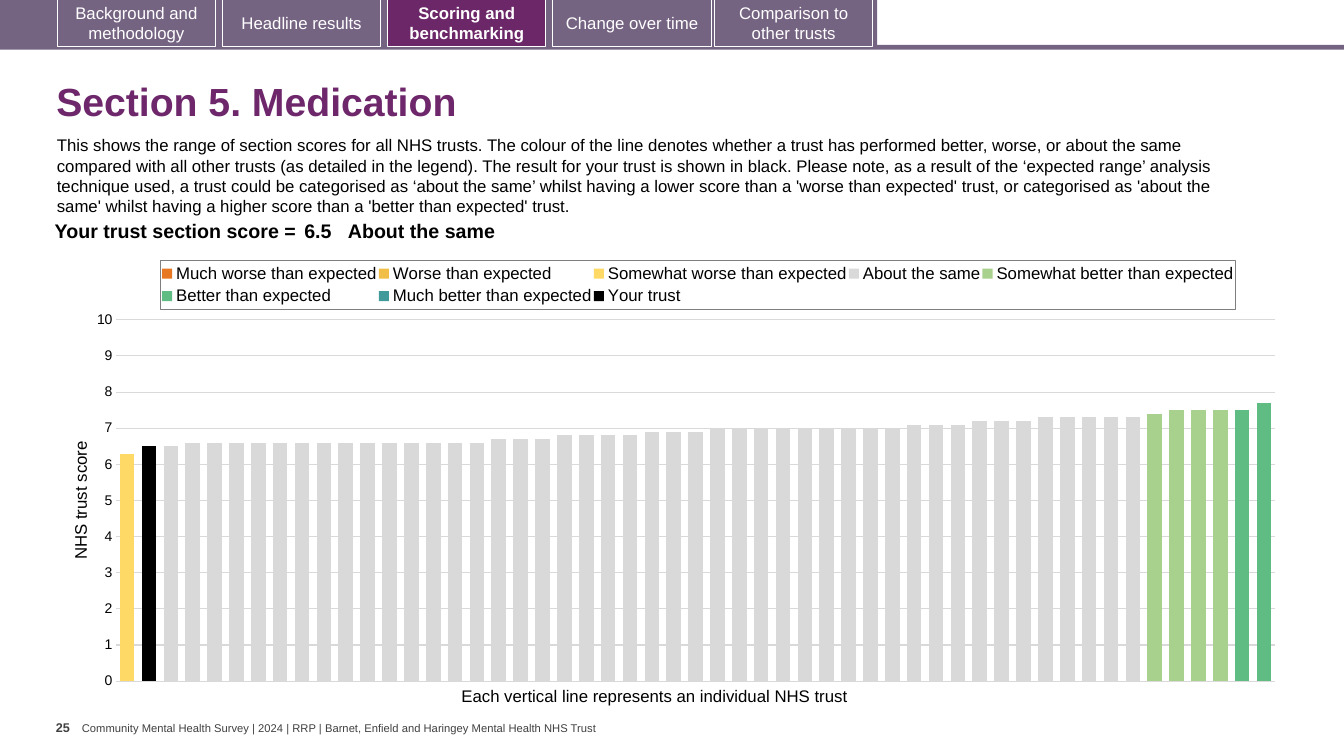
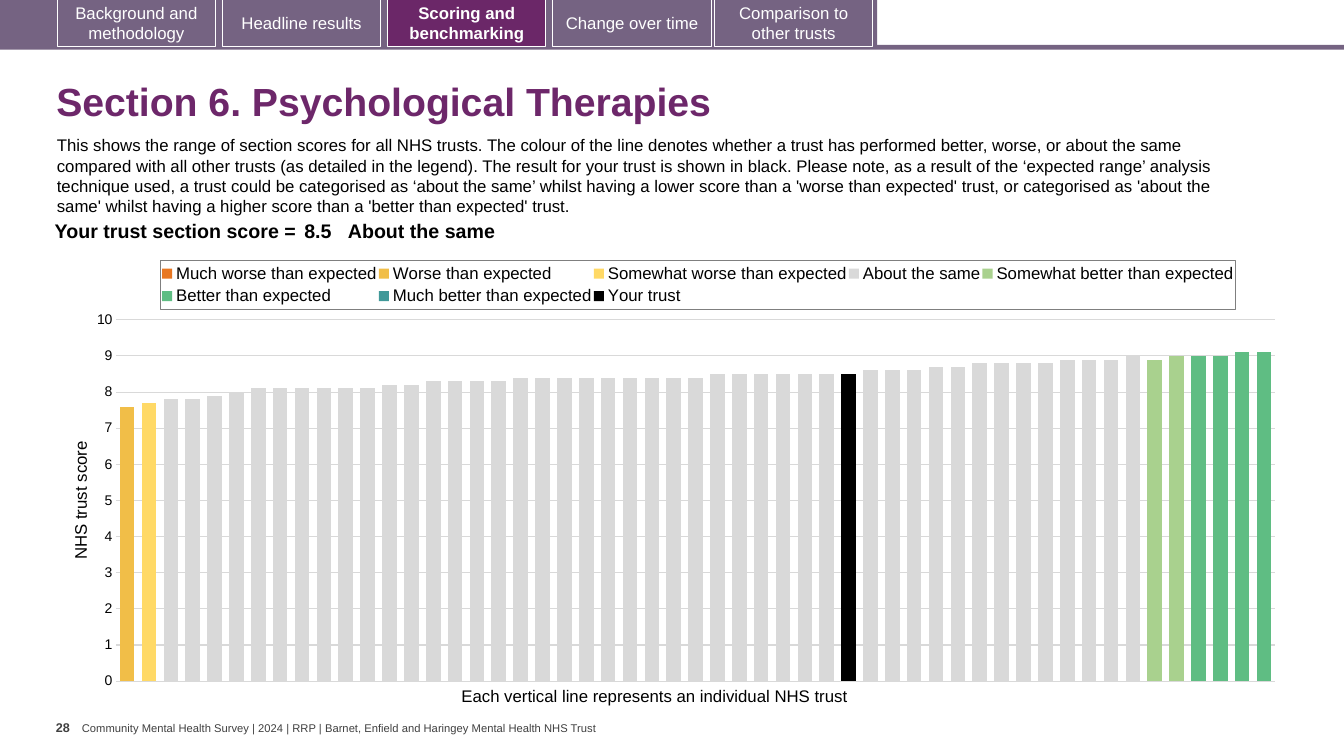
from copy import deepcopy
from dataclasses import dataclass

from pptx import Presentation
from pptx.chart.data import CategoryChartData
from pptx.dml.color import RGBColor
from pptx.enum.chart import XL_CHART_TYPE, XL_LEGEND_POSITION, XL_TICK_MARK
from pptx.enum.shapes import MSO_SHAPE
from pptx.enum.text import MSO_ANCHOR, MSO_AUTO_SIZE, PP_ALIGN
from pptx.oxml import parse_xml
from pptx.oxml.ns import nsdecls, qn
from pptx.util import Pt

COLUMNS = XL_CHART_TYPE.COLUMN_CLUSTERED
LEGEND_TOP = XL_LEGEND_POSITION.TOP
NO_TICKS = XL_TICK_MARK.NONE
RECTANGLE = MSO_SHAPE.RECTANGLE
TOP, MIDDLE = MSO_ANCHOR.TOP, MSO_ANCHOR.MIDDLE
NO_AUTOFIT = MSO_AUTO_SIZE.NONE
LEFT, CENTER, RIGHT = PP_ALIGN.LEFT, PP_ALIGN.CENTER, PP_ALIGN.RIGHT

FONT = "Arial"
BLACK, WHITE, GREY = "000000", "FFFFFF", "404040"
BAND, ACTIVE, TITLE = "756382", "6B2768", "6D276A"
GRID, LEGEND_LINE = "D9D9D9", "7F7F7F"

TITLE_ONLY = 5
TRUST_COUNT = 53
ACTIVE_TAB = "Scoring and benchmarking"
TABS = {
    "Background and methodology": 41,
    "Headline results": 159,
    ACTIVE_TAB: 277,
    "Change over time": 395,
    "Comparison to other trusts": 510.5,
}
SERIES_COLORS = {
    "Much worse than expected": "E87722",
    "Worse than expected": "F1BE48",
    "Somewhat worse than expected": "FFD966",
    "About the same": "D9D9D9",
    "Somewhat better than expected": "A9D18E",
    "Better than expected": "5FBD83",
    "Much better than expected": "419999",
    "Your trust": "000000",
}
FOOTER = ("Community Mental Health Survey | 2024 | RRP | "
          "Barnet, Enfield and Haringey Mental Health NHS Trust")
CAPTION = "Each vertical line represents an individual NHS trust"
EXPLANATION = (
    "This shows the range of section scores for all NHS trusts. The colour of the line "
    "denotes whether a trust has performed better, worse, or about the same compared with "
    "all other trusts (as detailed in the legend). The result for your trust is shown in "
    "black. Please note, as a result of the ‘expected range’ analysis technique used, a trust "
    "could be categorised as ‘about the same’ whilst having a lower score than a 'worse than "
    "expected' trust, or categorised as 'about the same' whilst having a higher score than a "
    "'better than expected' trust."
)


@dataclass
class Section:
    """One survey section; scores map a series to its first trust and values."""
    title: str
    page: str
    score: str
    rating: str
    scores: dict


SECTIONS = [
    Section("Section 5. Medication", "25", "6.5", "About the same", {
        "Somewhat worse than expected": (1, [6.3]),
        "About the same": (2, [
            6.5, 6.5, 6.6, 6.6, 6.6, 6.6, 6.6, 6.6, 6.6, 6.6, 6.6, 6.6, 6.6, 6.6, 6.6, 6.6,
            6.7, 6.7, 6.7, 6.8, 6.8, 6.8, 6.8, 6.9, 6.9, 6.9, 7, 7, 7, 7, 7, 7, 7, 7, 7,
            7.1, 7.1, 7.1, 7.2, 7.2, 7.2, 7.3, 7.3, 7.3, 7.3, 7.3]),
        "Somewhat better than expected": (48, [7.4, 7.5, 7.5, 7.5]),
        "Better than expected": (52, [7.5, 7.7]),
        "Your trust": (2, [6.5]),
    }),
    Section("Section 6. Psychological Therapies", "28", "8.5", "About the same", {
        "Worse than expected": (1, [7.6]),
        "Somewhat worse than expected": (2, [7.7]),
        "About the same": (3, [
            7.8, 7.8, 7.9, 8, 8.1, 8.1, 8.1, 8.1, 8.1, 8.1, 8.2, 8.2, 8.3, 8.3, 8.3, 8.3,
            8.4, 8.4, 8.4, 8.4, 8.4, 8.4, 8.4, 8.4, 8.4, 8.5, 8.5, 8.5, 8.5, 8.5, 8.5, 8.5,
            8.6, 8.6, 8.6, 8.7, 8.7, 8.8, 8.8, 8.8, 8.8, 8.9, 8.9, 8.9, 9]),
        "Somewhat better than expected": (48, [8.9, 9]),
        "Better than expected": (50, [9, 9, 9.1, 9.1]),
        "Your trust": (34, [8.5]),
    }),
]


def color(hex_value):
    """Turn a hex string into a colour."""
    return RGBColor.from_string(hex_value)


def style_font(font, size, hex_value=BLACK, bold=False):
    """Apply the deck's typeface with a size, colour and weight."""
    font.name, font.size, font.bold = FONT, Pt(size), bold
    font.color.rgb = color(hex_value)


def write(frame, text, size, hex_value=BLACK, bold=False, align=LEFT):
    """Set one formatted paragraph and return it."""
    frame.text = text
    paragraph = frame.paragraphs[0]
    paragraph.alignment = align
    style_font(paragraph.runs[0].font, size, hex_value, bold)
    return paragraph


def add_text(slide, box, text, size, hex_value=BLACK, bold=False, anchor=TOP, side=7.2, ends=3.6):
    """Add a wrapping text box with the given side and end insets."""
    frame = slide.shapes.add_textbox(*map(Pt, box)).text_frame
    frame.word_wrap, frame.vertical_anchor = True, anchor
    frame.margin_left = frame.margin_right = Pt(side)
    frame.margin_top = frame.margin_bottom = Pt(ends)
    write(frame, text, size, hex_value, bold)


def add_rectangle(slide, box, fill, outline=None):
    """Add a flat rectangle, outlined only when a colour is given."""
    shape = slide.shapes.add_shape(RECTANGLE, *map(Pt, box))
    shape.shadow.inherit = False
    shape.fill.solid()
    shape.fill.fore_color.rgb = color(fill)
    if outline:
        shape.line.color.rgb = color(outline)
        shape.line.width = Pt(0.75)
    else:
        shape.line.fill.background()
    return shape


def add_tab(slide, label, left):
    """Add one navigation tab, highlighted when it is the active one."""
    active = label == ACTIVE_TAB
    tab = add_rectangle(slide, (left, -0.5, 113, 34), ACTIVE if active else BAND, WHITE)
    tab.text_frame.word_wrap = True
    tab.text_frame.vertical_anchor = MIDDLE
    write(tab.text_frame, label, 12, WHITE, active, CENTER)


def move_frame_to_layout(slide):
    """Draw the navigation and footer, then hand them to the slide's layout."""
    add_rectangle(slide, (0, 32, 960, 3.5), BAND)
    add_rectangle(slide, (0, 0, 626.5, 34), BAND)
    for label, left in TABS.items():
        add_tab(slide, label, left)
    add_text(slide, (58.5, 515.5, 380, 9.5), FOOTER, 8, GREY, anchor=MIDDLE, side=0, ends=0)
    layout = slide.slide_layout
    for placeholder in list(layout.placeholders)[1:]:
        layout.shapes.element.remove(placeholder.element)
    for shape in list(slide.shapes):
        if not shape.is_placeholder:
            layout.shapes.element.append(shape.element)


def set_title(slide, text):
    """Place and format the title placeholder."""
    title = slide.shapes.title
    title.left, title.top, title.width, title.height = map(Pt, (33, 48, 899, 52))
    frame = title.text_frame
    paragraph = write(frame, text, 28, TITLE, True)
    paragraph.line_spacing = 0.9
    frame.word_wrap, frame.vertical_anchor, frame.auto_size = True, MIDDLE, NO_AUTOFIT


def add_score_table(slide, section):
    """Add the one-row table with the trust's score and rating."""
    widths = (189.5, 34, 618.5)
    table = slide.shapes.add_table(1, 3, Pt(25), Pt(155), Pt(sum(widths)), Pt(22)).table
    table.first_row = table.horz_banding = False
    columns = (
        ("Your trust section score =", RIGHT, 2.9),
        (section.score, LEFT, 2.9),
        (section.rating, LEFT, 0),
    )
    for index, (text, align, side) in enumerate(columns):
        table.columns[index].width = Pt(widths[index])
        cell = table.cell(0, index)
        cell.fill.background()
        cell.margin_left = cell.margin_right = Pt(side)
        cell.margin_top = cell.margin_bottom = Pt(2.9)
        write(cell.text_frame, text, 14, BLACK, True, align)


def manual_layout(x, y, width, height, target=""):
    """Build a chart layout element from fractions of the chart area."""
    return parse_xml(
        f'<c:layout {nsdecls("c")}><c:manualLayout>{target}'
        f'<c:xMode val="edge"/><c:yMode val="edge"/><c:x val="{x}"/><c:y val="{y}"/>'
        f'<c:w val="{width}"/><c:h val="{height}"/></c:manualLayout></c:layout>')


def place_plot_and_legend(chart):
    """Fix the plot area and the outlined legend inside the chart."""
    plot_area = chart.element.find(".//" + qn("c:plotArea"))
    for layout in plot_area.findall(qn("c:layout")):
        plot_area.remove(layout)
    inner = '<c:layoutTarget val="inner"/>'
    plot_area.insert(0, manual_layout(0.04, 0.158, 0.946, 0.808, inner))
    legend = chart.element.find(".//" + qn("c:legend"))
    legend.find(qn("c:legendPos")).addnext(manual_layout(0.076, 0.025, 0.878, 0.11))
    legend.find(qn("c:overlay")).addnext(parse_xml(
        f'<c:spPr {nsdecls("c", "a")}><a:ln w="9525"><a:solidFill>'
        f'<a:srgbClr val="{LEGEND_LINE}"/></a:solidFill></a:ln></c:spPr>'))


def move_last_series_to_right_axis(chart):
    """Draw the last series on a second, unlabelled value axis."""
    plot_area = chart.element.find(".//" + qn("c:plotArea"))
    bars = plot_area.find(qn("c:barChart"))
    right_bars = deepcopy(bars)
    bars.remove(bars.findall(qn("c:ser"))[-1])
    for series in right_bars.findall(qn("c:ser"))[:-1]:
        right_bars.remove(series)
    bars.addnext(right_bars)
    category_id, value_id = "50010", "50020"
    for axis_id, number in zip(right_bars.findall(qn("c:axId")), (category_id, value_id)):
        axis_id.set("val", number)
    left_axis = plot_area.find(qn("c:valAx"))
    right_axis = deepcopy(left_axis)
    hidden_axis = deepcopy(plot_area.find(qn("c:catAx")))
    for tag in ("c:majorGridlines", "c:title"):
        right_axis.remove(right_axis.find(qn(tag)))
    settings = {"c:axId": value_id, "c:crossAx": category_id, "c:axPos": "r",
                "c:crosses": "max", "c:majorTickMark": "out", "c:tickLblPos": "none"}
    for tag, value in settings.items():
        right_axis.find(qn(tag)).set("val", value)
    hidden_axis.find(qn("c:axId")).set("val", category_id)
    hidden_axis.find(qn("c:crossAx")).set("val", value_id)
    left_axis.addnext(right_axis)
    right_axis.addnext(hidden_axis)


def style_value_axis(axis):
    """Format the score axis from 0 to 10 with light gridlines."""
    axis.minimum_scale, axis.maximum_scale, axis.major_unit = 0, 10, 1
    axis.major_tick_mark = axis.minor_tick_mark = NO_TICKS
    axis.format.line.fill.background()
    axis.has_major_gridlines = True
    axis.major_gridlines.format.line.color.rgb = color(GRID)
    axis.major_gridlines.format.line.width = Pt(0.75)
    style_font(axis.tick_labels.font, 10)
    write(axis.axis_title.text_frame, "NHS trust score", 12)


def add_score_chart(slide, scores):
    """Add the column chart of all trusts, coloured by rating."""
    data = CategoryChartData()
    data.categories = [str(number) for number in range(1, TRUST_COUNT + 1)]
    for name in SERIES_COLORS:
        first, values = scores.get(name, (1, []))
        padded = [None] * (first - 1) + values
        data.add_series(name, padded + [None] * (TRUST_COUNT - len(padded)))
    box = map(Pt, (48, 178, 875, 319.5))
    chart = slide.shapes.add_chart(COLUMNS, *box, data).chart
    chart.has_title = False
    style_font(chart.font, 10)
    chart.font.name = "Calibri"
    plot = chart.plots[0]
    plot.gap_width, plot.overlap, plot.vary_by_categories = 50, 100, False
    for series in plot.series:
        series.format.fill.solid()
        series.format.fill.fore_color.rgb = color(SERIES_COLORS[series.name])
    chart.category_axis.visible = False
    style_value_axis(chart.value_axis)
    chart.has_legend = True
    chart.legend.position = LEGEND_TOP
    chart.legend.include_in_layout = False
    style_font(chart.legend.font, 12)
    place_plot_and_legend(chart)
    move_last_series_to_right_axis(chart)


def fill_slide(slide, section):
    """Add the content of one section slide."""
    set_title(slide, section.title)
    add_text(slide, (40, 511, 18, 29), section.page, 9, GREY, True, side=0)
    add_text(slide, (33.5, 93, 873.5, 65.5), EXPLANATION, 12)
    add_text(slide, (322.5, 486, 296, 21.5), CAPTION, 12)
    add_score_chart(slide, section.scores)
    add_score_table(slide, section)


def main():
    """Build and save the presentation."""
    presentation = Presentation()
    presentation.slide_width, presentation.slide_height = Pt(960), Pt(540)
    layout = presentation.slide_layouts[TITLE_ONLY]
    slides = [presentation.slides.add_slide(layout) for _ in SECTIONS]
    move_frame_to_layout(slides[0])
    for slide, section in zip(slides, SECTIONS):
        fill_slide(slide, section)
    presentation.save("out.pptx")


if __name__ == "__main__":
    main()
